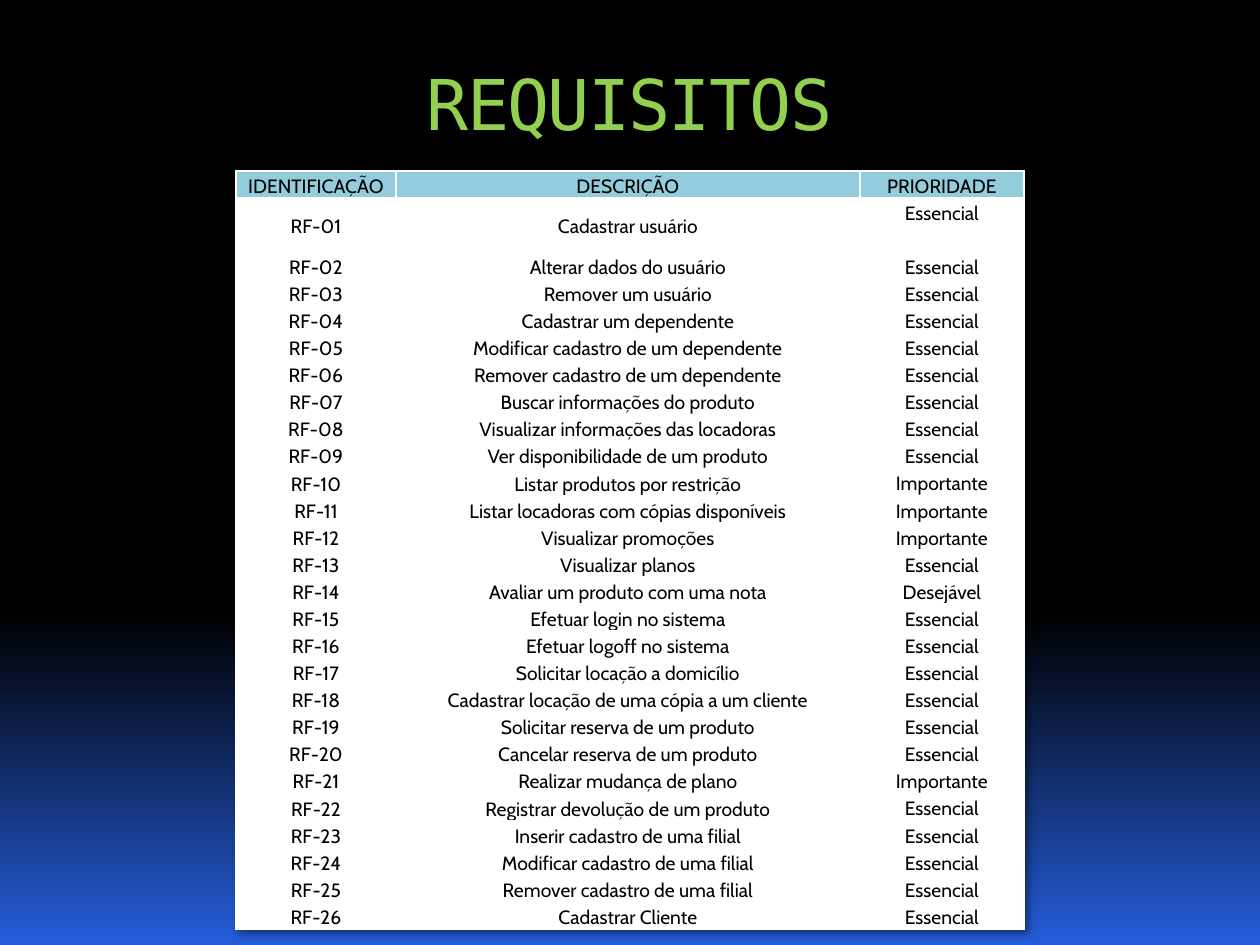
from copy import deepcopy
from typing import NamedTuple

from lxml.etree import SubElement
from pptx import Presentation
from pptx.dml.color import RGBColor
from pptx.enum.text import MSO_ANCHOR, PP_ALIGN
from pptx.oxml import parse_xml
from pptx.oxml.ns import nsdecls, qn
from pptx.util import Pt

PX = 914400 // 126
COLORS = {
    "black": "000000",
    "blue": "245CD9",
    "green": "92D050",
    "header": "93CDDD",
    "white": "FFFFFF",
}
BACKGROUND_STOPS = [(0, "black"), (0.65, "black"), (1, "blue")]
COLUMN_WIDTHS = [160, 464, 164]
ROW_HEIGHT, FIRST_ROW_HEIGHT = 25, 54
HEADERS = ("IDENTIFICAÇÃO", "DESCRIÇÃO", "PRIORIDADE")


class Requirement(NamedTuple):
    description: str
    priority: str = "Essencial"


REQUIREMENTS = [
    Requirement("Cadastrar usuário"),
    Requirement("Alterar dados do usuário"),
    Requirement("Remover um usuário"),
    Requirement("Cadastrar um dependente"),
    Requirement("Modificar cadastro de um dependente"),
    Requirement("Remover cadastro de um dependente"),
    Requirement("Buscar informações do produto"),
    Requirement("Visualizar informações das locadoras"),
    Requirement("Ver disponibilidade de um produto"),
    Requirement("Listar produtos por restrição", "Importante"),
    Requirement("Listar locadoras com cópias disponíveis", "Importante"),
    Requirement("Visualizar promoções", "Importante"),
    Requirement("Visualizar planos"),
    Requirement("Avaliar um produto com uma nota", "Desejável"),
    Requirement("Efetuar login no sistema"),
    Requirement("Efetuar logoff no sistema"),
    Requirement("Solicitar locação a domicílio"),
    Requirement("Cadastrar locação de uma cópia a um cliente"),
    Requirement("Solicitar reserva de um produto"),
    Requirement("Cancelar reserva de um produto"),
    Requirement("Realizar mudança de plano", "Importante"),
    Requirement("Registrar devolução de um produto"),
    Requirement("Inserir cadastro de uma filial"),
    Requirement("Modificar cadastro de uma filial"),
    Requirement("Remover cadastro de uma filial"),
    Requirement("Cadastrar Cliente"),
]


def px(n: int) -> int:
    return n * PX


def rgb(name: str) -> RGBColor:
    return RGBColor.from_string(COLORS[name])


def write(tf, text: str, *, font: str, size: int, color: str,
          line_spacing: float = 1.0, tracking: int = 0) -> None:
    """Put one centred line in a text frame; tracking is in points."""
    p = tf.paragraphs[0]
    p.alignment = PP_ALIGN.CENTER
    p.line_spacing = line_spacing
    r = p.add_run()
    r.text = text
    r.font.name = font
    r.font.size = Pt(size)
    r.font.color.rgb = rgb(color)
    if tracking:
        r.font._element.set("spc", str(tracking * 100))


def set_background(s) -> None:
    fill = s.background.fill
    fill.gradient()
    fill.gradient_angle = 270
    first = s._element.find(".//" + qn("a:gs"))
    first.addnext(deepcopy(first))
    for stop, (position, color) in zip(fill.gradient_stops, BACKGROUND_STOPS):
        stop.position = position
        stop.color.rgb = rgb(color)


def add_title(s) -> None:
    sp = s.shapes.title
    sp.left, sp.top, sp.width, sp.height = px(88), px(49), px(1083), px(158)
    tf = sp.text_frame
    tf.vertical_anchor = MSO_ANCHOR.TOP
    tf.margin_top = px(11)
    write(tf, "REQUISITOS", font="DejaVu Sans Mono", size=40,
          color="green", tracking=-1)


def set_borders(cell, color: str, width: int) -> None:
    tc_pr = cell._tc.get_or_add_tcPr()
    for i, side in enumerate(("a:lnL", "a:lnR", "a:lnT", "a:lnB")):
        ln = tc_pr.makeelement(qn(side), {"w": str(Pt(width))})
        fill = SubElement(ln, qn("a:solidFill"))
        SubElement(fill, qn("a:srgbClr"), val=COLORS[color])
        tc_pr.insert(i, ln)


def format_cell(cell, text: str, fill: str, anchor: MSO_ANCHOR) -> None:
    cell.fill.solid()
    cell.fill.fore_color.rgb = rgb(fill)
    cell.vertical_anchor = anchor
    cell.margin_left = cell.margin_right = px(6)
    cell.margin_top = cell.margin_bottom = 0
    write(cell.text_frame, text, font="Cabin", size=11, color="black",
          line_spacing=1.15)
    set_borders(cell, "white", 1)


def add_shadow(table) -> None:
    table._tbl.tblPr.insert(0, parse_xml(
        f'<a:effectLst {nsdecls("a")}>'
        '<a:outerShdw blurRad="50800" dist="38100" dir="2700000" algn="tl">'
        f'<a:srgbClr val="{COLORS["black"]}"><a:alpha val="40000"/></a:srgbClr>'
        '</a:outerShdw></a:effectLst>'))


def add_requirements_table(s) -> None:
    rows = [HEADERS] + [(f"RF-{n:02}", *req)
                        for n, req in enumerate(REQUIREMENTS, 1)]
    heights = [ROW_HEIGHT] * len(rows)
    heights[1] = FIRST_ROW_HEIGHT
    table = s.shapes.add_table(
        len(rows), len(HEADERS), px(236), px(171),
        px(sum(COLUMN_WIDTHS)), px(sum(heights))).table
    add_shadow(table)
    for column, width in zip(table.columns, COLUMN_WIDTHS):
        column.width = px(width)
    for i, (values, height) in enumerate(zip(rows, heights)):
        table.rows[i].height = px(height)
        for j, text in enumerate(values):
            format_cell(table.cell(i, j), text,
                        "header" if i == 0 else "white",
                        MSO_ANCHOR.TOP if j == 2 else MSO_ANCHOR.MIDDLE)


def main() -> None:
    prs = Presentation()
    prs.slide_width, prs.slide_height = px(1260), px(945)
    s = prs.slides.add_slide(prs.slide_layouts[5])
    set_background(s)
    add_title(s)
    add_requirements_table(s)
    prs.save("out.pptx")


if __name__ == "__main__":
    main()
